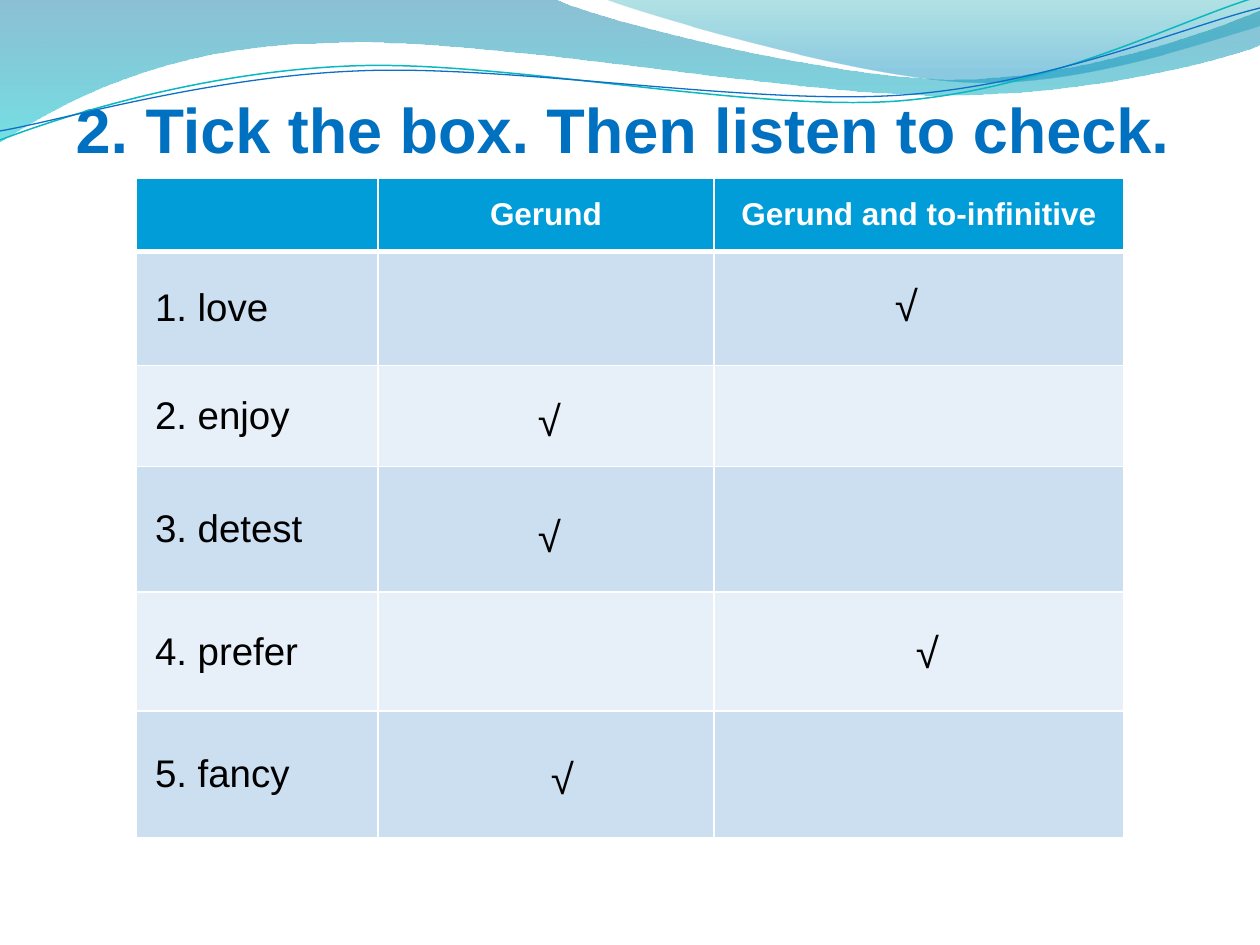
from lxml import etree
from pptx import Presentation, util as u
from pptx.dml.color import RGBColor
from pptx.enum import text as t
from pptx.oxml import ns

PX = 7257


def color(value):
    return RGBColor.from_string(value)


def write(frame, words, size, fill="000000", bold=False, align=t.PP_ALIGN.LEFT):
    frame.word_wrap = True
    paragraph = frame.paragraphs[0]
    paragraph.alignment = align
    paragraph.space_before = u.Pt(0)
    run = paragraph.add_run()
    run.text = words
    run.font.name = "Arial"
    run.font.size = u.Pt(size)
    run.font.bold = bold
    run.font.color.rgb = color(fill)


presentation = Presentation()
presentation.slide_width = u.Inches(10)
presentation.slide_height = u.Inches(7.5)
slide = presentation.slides.add_slide(presentation.slide_layouts[1])
slide.shapes.element.remove(slide.shapes.title.element)

bands = [
    ([(0, 0), (554, -1), (600, 21, 837, 79, 955, 79), (1075, 79, 1207, 33, 1260, 11), (1261, 45),
      (1239, 55, 1096, 96, 940, 95), (784, 95, 481, 35, 324, 43), (163, 45, 58, 105, -1, 142)],
     [(0, "0074A1", 45), (1, "00C6CF", 55)]),
    ([(604, -1), (641, 14, 859, 78, 969, 82), (1079, 87, 1211, 40, 1260, 26), (1260, 0)],
     [(0, "00A1A9", 30), (0.8, "008BBF", 45)]),
]
waves = [
    ([(0, 140), (60, 117, 199, 72, 349, 66), (498, 59, 747, 112, 898, 101), (1050, 89, 1182, 19, 1257, -3)],
     ("0AB8BF", 0.85)),
    ([(0, 131), (59, 121, 207, 77, 357, 71), (508, 64, 752, 106, 903, 95), (1053, 84, 1186, 26, 1260, 8)],
     ("0F6FC6", 0.75)),
]

for outline, style in bands + waves:
    closed = isinstance(style, list)
    points = [segment[k:k + 2] for segment in outline for k in range(0, len(segment), 2)]
    builder = slide.shapes.build_freeform(*points[0], scale=PX)
    builder.add_line_segments(points[1:], close=closed)
    shape = builder.convert_to_shape()
    shape.shadow.inherit = False
    lines = iter(list(shape.element.iter(ns.qn("a:lnTo"))))
    for segment in outline[1:]:
        pieces = [next(lines) for _ in range(len(segment) // 2)]
        if len(pieces) == 3:
            curve = etree.Element(ns.qn("a:cubicBezTo"))
            pieces[0].addprevious(curve)
            for piece in pieces:
                curve.append(piece[0])
                piece.getparent().remove(piece)
    if closed:
        shape.line.fill.background()
        shape.fill.gradient()
        shape.fill.gradient_angle = 270
        for stop, (position, value, opacity) in zip(shape.fill.gradient_stops, style):
            stop.position = position
            stop.color.rgb = color(value)
        for node, (position, value, opacity) in zip(shape.element.iter(ns.qn("a:srgbClr")), style):
            etree.SubElement(node, ns.qn("a:alpha")).set("val", str(opacity * 1000))
    else:
        shape.fill.background()
        shape.line.color.rgb = color(style[0])
        shape.line.width = u.Pt(style[1])

heading = slide.placeholders[1]
heading.left, heading.top, heading.width, heading.height = 63 * PX, 84 * PX, 1134 * PX, 760 * PX
properties = heading.text_frame.paragraphs[0]._p.get_or_add_pPr()
properties.set("marL", "0")
properties.set("indent", "0")
etree.SubElement(properties, ns.qn("a:buNone"))
write(heading.text_frame, "2. Tick the box. Then listen to check.", size=36, fill="0070C0", bold=True)

rows = [
    ["", "Gerund", "Gerund and to-infinitive"],
    ["1. love", "", ""],
    ["2. enjoy", "", ""],
    ["3. detest", "", ""],
    ["4. prefer", "", ""],
    ["5. fancy", "", ""],
]
widths = [242, 336, 410]
heights = [72, 114, 101, 126, 119, 127]
table = slide.shapes.add_table(len(rows), len(widths), 136 * PX, 178 * PX, sum(widths) * PX, sum(heights) * PX).table
for column, width in zip(table.columns, widths):
    column.width = width * PX
for row, height in zip(table.rows, heights):
    row.height = height * PX

for i, row in enumerate(rows):
    for j, words in enumerate(row):
        cell = table.cell(i, j)
        properties = cell._tc.get_or_add_tcPr()
        for side in "LRTB":
            thick = (i, side) in [(0, "B"), (1, "T")]
            border = etree.SubElement(properties, ns.qn("a:ln" + side), w=str(u.Pt(3 if thick else 1)))
            solid = etree.SubElement(border, ns.qn("a:solidFill"))
            etree.SubElement(solid, ns.qn("a:srgbClr"), val="FFFFFF")
        cell.fill.solid()
        cell.fill.fore_color.rgb = color("009DD9" if i == 0 else "CCDFF1" if i % 2 else "E7EFF8")
        if not words:
            continue
        cell.margin_left = cell.margin_right = cell.margin_top = cell.margin_bottom = 19 * PX
        if i == 0:
            write(cell.text_frame, words, size=18, fill="FFFFFF", bold=True, align=t.PP_ALIGN.CENTER)
        else:
            write(cell.text_frame, words, size=22)
            cell.vertical_anchor = t.MSO_ANCHOR.MIDDLE

for left, top, width in [(882, 273, 49), (525, 388, 49), (536, 746, 53), (903, 620, 49), (525, 504, 49)]:
    tick = slide.shapes.add_textbox(left * PX, top * PX, width * PX, 63 * PX)
    write(tick.text_frame, "√", size=24, align=t.PP_ALIGN.CENTER)

presentation.save("out.pptx")
